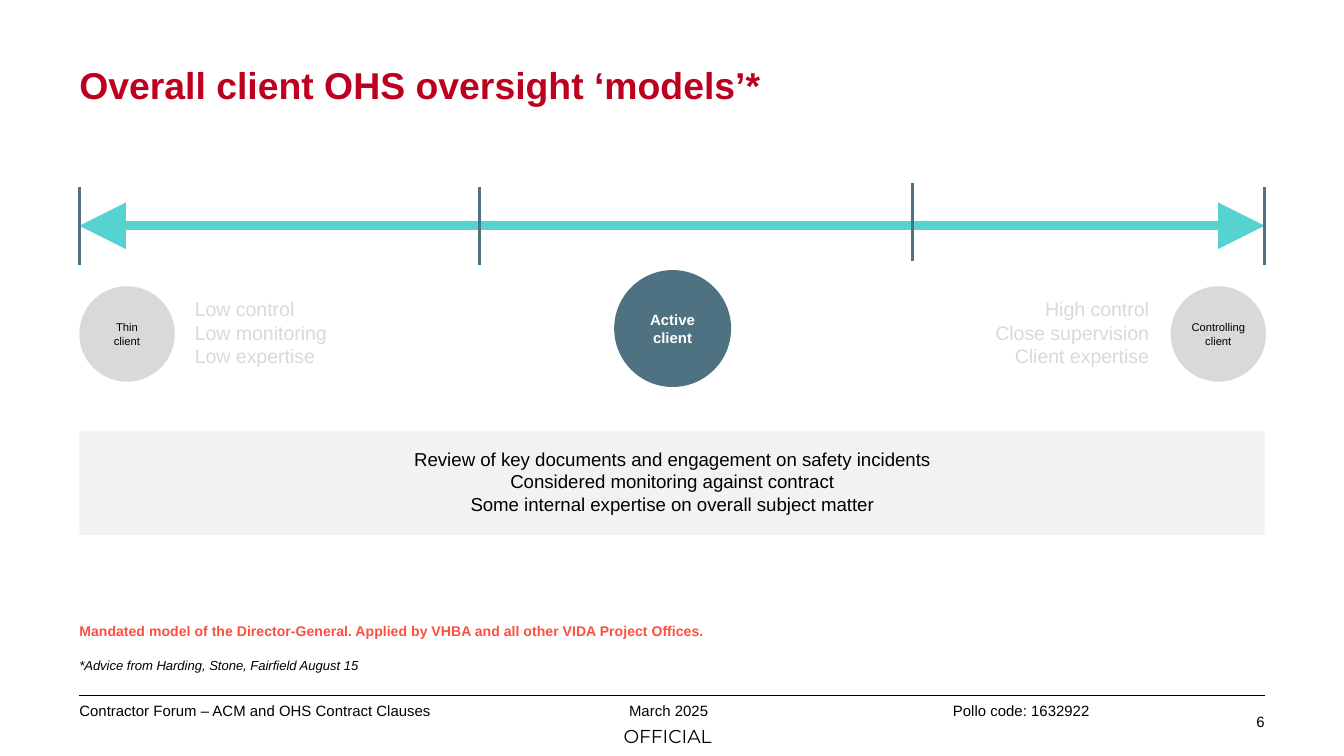
from lxml import etree
from pptx import Presentation
from pptx.dml.color import RGBColor
from pptx.enum.shapes import MSO_CONNECTOR as CONN, MSO_SHAPE as SHAPE
from pptx.enum.text import MSO_ANCHOR as ANCHOR, PP_ALIGN as ALIGN
from pptx.oxml.ns import qn
from pptx.util import Inches, Pt

BLACK = RGBColor(0x00, 0x00, 0x00)
WHITE = RGBColor(0xFF, 0xFF, 0xFF)
CRIMSON = RGBColor(0xBC, 0x00, 0x20)
CORAL = RGBColor(0xFE, 0x4E, 0x3E)
TEAL = RGBColor(0x56, 0xD2, 0xD1)
SLATE = RGBColor(0x4F, 0x72, 0x82)
GREY = RGBColor(0xD9, 0xD9, 0xD9)
PALE = RGBColor(0xF2, 0xF2, 0xF2)

LEFT, RIGHT = 0.59, 9.41
WIDTH = RIGHT - LEFT

# Widescreen 16:9
prs = Presentation()
prs.slide_width, prs.slide_height = Inches(10), Inches(10 * 9 / 16)
s = prs.slides.add_slide(prs.slide_layouts[6])


def add_text(box, lines, size, color=BLACK, bold=False, italic=False, align=ALIGN.LEFT,
             anchor=ANCHOR.TOP, shape=None, fill=None, inset=(0, 0), font="Arial"):
    """Add a text box, or a filled shape with text, and return its paragraph."""
    box = [Inches(v) for v in box]
    if shape is None:
        sp = s.shapes.add_textbox(*box)
    else:
        sp = s.shapes.add_shape(shape, *box)
        sp.shadow.inherit = False
        sp.fill.solid()
        sp.fill.fore_color.rgb = fill
        sp.line.fill.background()
    tf = sp.text_frame
    tf.word_wrap = True
    tf.vertical_anchor = anchor
    tf.margin_left = tf.margin_right = Inches(inset[0])
    tf.margin_top = tf.margin_bottom = Inches(inset[1])
    p = tf.paragraphs[0]
    p.alignment = align
    for i, line in enumerate(lines):
        if i:
            p.add_line_break()
        r = p.add_run()
        r.text = line
        r.font.name, r.font.size = font, Pt(size)
        r.font.bold, r.font.italic = bold, italic
        r.font.color.rgb = color
    return p


def add_line(x1, y1, x2, y2, color, width):
    c = s.shapes.add_connector(CONN.STRAIGHT, Inches(x1), Inches(y1), Inches(x2), Inches(y2))
    c.line.color.rgb = color
    c.line.width = Pt(width)
    etree.SubElement(c._element.spPr, qn("a:effectLst"))
    return c


# Title
add_text((LEFT, 0.28, WIDTH, 0.7), ["Overall client OHS oversight ‘models’*"], 20,
         CRIMSON, bold=True, anchor=ANCHOR.MIDDLE)

# Control scale: double-headed arrow and dividers
arrow = add_line(LEFT, 1.68, RIGHT, 1.68, TEAL, 5)
ln = arrow._element.spPr.find(qn("a:ln"))
for end in ("a:headEnd", "a:tailEnd"):
    etree.SubElement(ln, qn(end), type="triangle", w="lg", len="lg")
for x, y in ((LEFT, 1.39), (3.57, 1.39), (6.79, 1.36), (RIGHT, 1.39)):
    add_line(x, y, x, y + 0.58, SLATE, 1.5)

# Client models
for x, y, d, label, size, fill, color, bold in (
    (LEFT, 2.13, 0.71, ["Thin", "client"], 6, GREY, BLACK, False),
    (8.71, 2.13, 0.71, ["Controlling client"], 6, GREY, BLACK, False),
    (4.57, 2.01, 0.87, ["Active client"], 8, SLATE, WHITE, True),
):
    add_text((x, y, d, d), label, size, color, bold=bold, align=ALIGN.CENTER,
             anchor=ANCHOR.MIDDLE, shape=SHAPE.OVAL, fill=fill, inset=(0.04, 0.04))

# Traits of the two extremes
add_text((1.45, 2.21, 1.42, 0.53), ["Low control", "Low monitoring", "Low expertise"],
         10.5, GREY)
add_text((6.9, 2.21, 1.65, 0.53), ["High control", "Close supervision", "Client expertise"],
         10.5, GREY, align=ALIGN.RIGHT)

# Active client description
add_text((LEFT, 3.21, WIDTH, 0.77),
         ["Review of key documents and engagement on safety incidents",
          "Considered monitoring against contract",
          "Some internal expertise on overall subject matter"],
         10, align=ALIGN.CENTER, shape=SHAPE.RECTANGLE, fill=PALE, inset=(0, 0.12))

# Notes under the diagram
add_text((LEFT, 4.63, 5.01, 0.13),
         ["Mandated model of the Director-General. Applied by VHBA and all other "
          "VIDA Project Offices."], 7.5, CORAL, bold=True)
add_text((LEFT, 4.89, 4.18, 0.12), ["*Advice from Harding, Stone, Fairfield August 15"], 7,
         italic=True)

# Footer
add_line(LEFT, 5.17, RIGHT, 5.17, BLACK, 0.25)
p = add_text((LEFT, 5.22, 8.85, 0.19),
             ["Contractor Forum – ACM and OHS Contract Clauses\tMarch 2025\tPollo code: 1632922"], 8)
tabs = etree.SubElement(p._p.get_or_add_pPr(), qn("a:tabLst"))
for x in (4.68, 7.09):
    etree.SubElement(tabs, qn("a:tab"), pos=str(Inches(x - LEFT)), algn="l")
add_text((8.27, 5.3, 1.14, 0.19), ["6"], 8, align=ALIGN.RIGHT)
add_text((4.64, 5.39, 0.76, 0.17), ["OFFICIAL"], 10, font="Montserrat")

prs.save("out.pptx")
